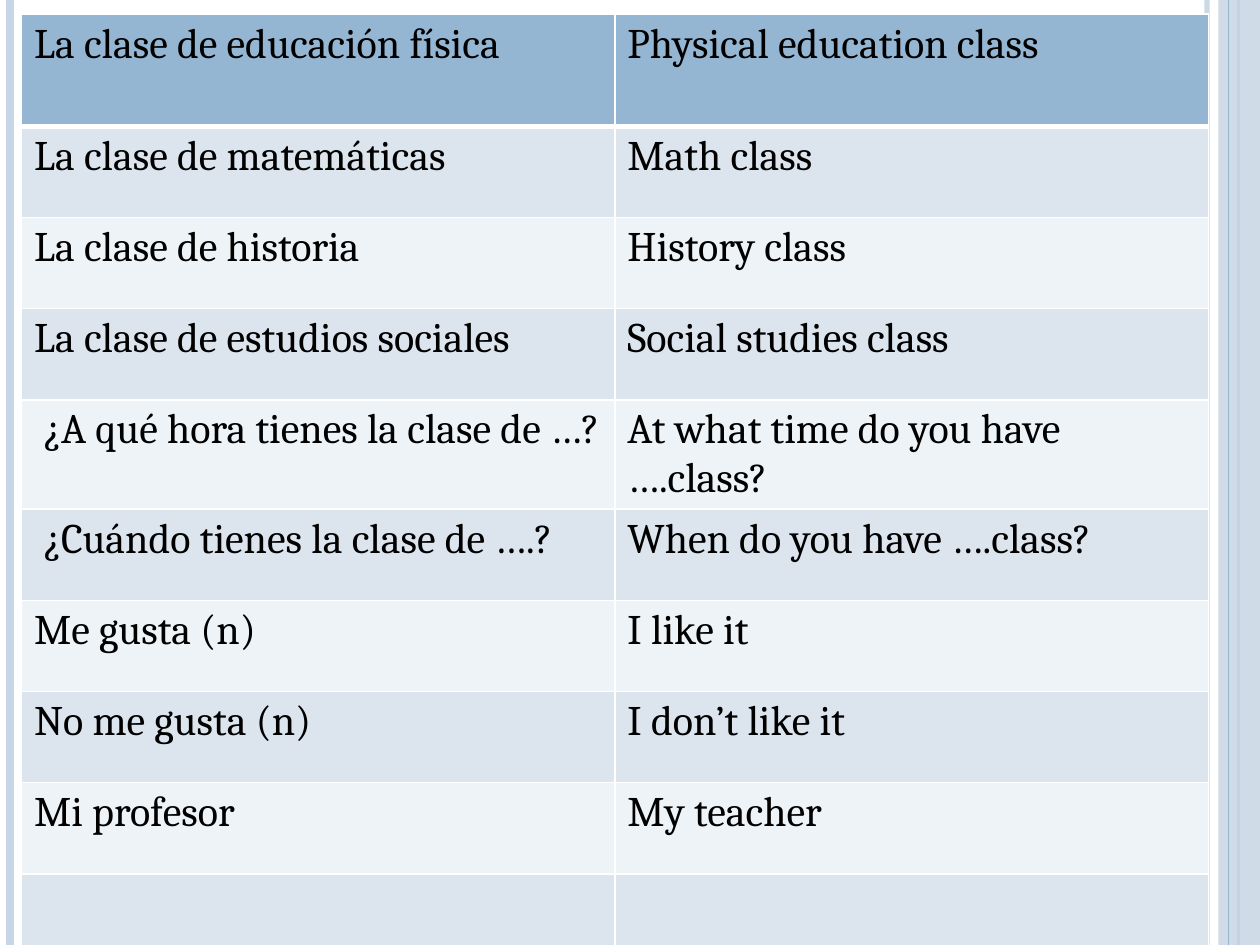
import pptx
import pptx.dml.color
import pptx.enum.shapes
import pptx.oxml
import pptx.oxml.ns
import pptx.util

FONT = "Cambria"
BLUE, PALE_BLUE, WHITE, BLACK = "94B6D2", "C8D7E5", "FFFFFF", "000000"
BANDS = ["DCE5EE", "EEF3F7"]
VOCABULARY = [
    ("La clase de educación física", "Physical education class"),
    ("La clase de matemáticas", "Math class"),
    ("La clase de historia", "History class"),
    ("La clase de estudios sociales", "Social studies class"),
    (" ¿A qué hora tienes la clase de …?", "At what time do you have ….class?"),
    (" ¿Cuándo tienes la clase de ….?", "When do you have ….class?"),
    ("Me gusta (n)", "I like it"),
    ("No me gusta (n)", "I don’t like it"),
    ("Mi profesor", "My teacher"),
    ("", ""),
]


def color(value):
    return pptx.dml.color.RGBColor.from_string(value)


def add_xml(parent, tag, content="", index=None):
    """Insert a drawing element, by default as the last child."""
    name = tag.split()[0]
    element = pptx.oxml.parse_xml(
        f"<a:{tag} {pptx.oxml.ns.nsdecls('a')}>{content}</a:{name}>")
    parent.insert(len(parent) if index is None else index, element)


deck = pptx.Presentation()
deck.slide_width = pptx.util.Inches(10)
deck.slide_height = pptx.util.Inches(7.5)
page = deck.slides.add_slide(deck.slide_layouts[6])
wide = deck.slide_width / 100   # one percent of the width
high = deck.slide_height / 100  # one percent of the height

# Vertical rules and the translucent band at the right edge
band_at = 3  # the band lies above the first three rules
rules = [(95.8, PALE_BLUE, 3, 93), (0.8, PALE_BLUE, 4.5, 100),
         (98.3, BLUE, 1.5, 100), (97.5, BLUE, 0.75, 100)]
for number, (x, shade, weight, opacity) in enumerate(rules):
    if number == band_at:
        band = page.shapes.add_shape(
            pptx.enum.shapes.MSO_SHAPE.RECTANGLE,
            int(96.7 * wide), 0, int(3.3 * wide), deck.slide_height)
        band.shadow.inherit = False
        band.line.fill.background()
        band.fill.solid()
        band.fill.fore_color.rgb = color(PALE_BLUE)
        add_xml(band.fill._xPr.find(".//" + pptx.oxml.ns.qn("a:srgbClr")),
                'alpha val="87000"')
    rule = page.shapes.add_connector(
        pptx.enum.shapes.MSO_CONNECTOR.STRAIGHT,
        int(x * wide), 0, int(x * wide), deck.slide_height)
    rule.line.color.rgb = color(shade)
    rule.line.width = pptx.util.Pt(weight)
    add_xml(rule._element.spPr, "effectLst")
    if opacity < 100:
        add_xml(rule._element.spPr.find(".//" + pptx.oxml.ns.qn("a:srgbClr")),
                f'alpha val="{opacity * 1000}"')

# Vocabulary table: one tall header row, then equal rows
header_height, row_height = int(11.87 * high), int(9.65 * high)
table = page.shapes.add_table(
    len(VOCABULARY), 2, int(1.7 * wide), int(1.5 * high), int(94.2 * wide),
    header_height + row_height * (len(VOCABULARY) - 1)).table
table.first_row = False
table.horz_banding = False

for row, words in enumerate(VOCABULARY):
    table.rows[row].height = row_height if row else header_height
    for column, text in enumerate(words):
        cell = table.cell(row, column)
        cell.fill.solid()
        cell.fill.fore_color.rgb = color(BANDS[(row - 1) % 2] if row else BLUE)
        cell.text = text
        para = cell.text_frame.paragraphs[0]
        para.font.name = FONT
        para.font.size = pptx.util.Pt(24)
        para.font.color.rgb = color(BLACK)

        # White borders, heavier between the header and the body
        top = 3 if row == 1 else 1
        bottom = 3 if row == 0 else 1
        sides = [("lnL", 1), ("lnR", 1), ("lnT", top), ("lnB", bottom)]
        for index, (side, weight) in enumerate(sides):
            add_xml(cell._tc.get_or_add_tcPr(),
                    f'{side} w="{pptx.util.Pt(weight)}"',
                    f'<a:solidFill><a:srgbClr val="{WHITE}"/></a:solidFill>',
                    index)

deck.save("out.pptx")
